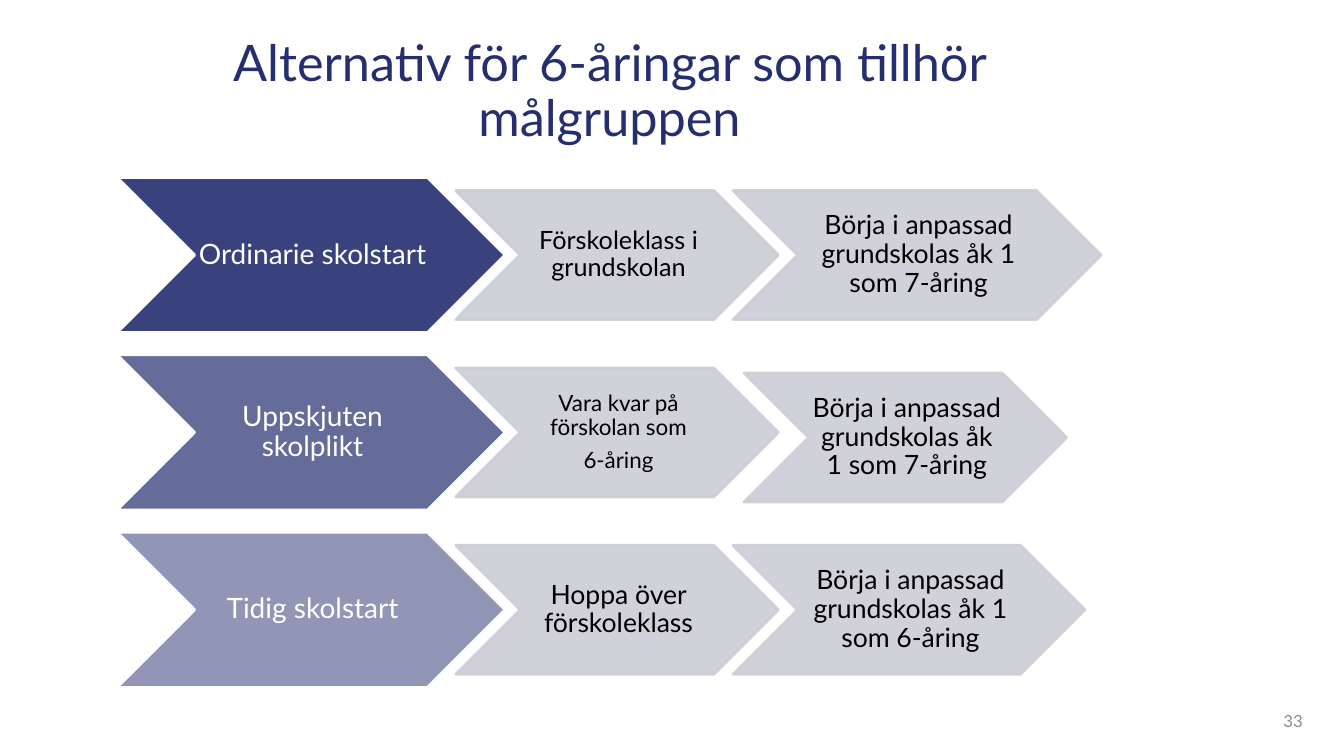
from dataclasses import dataclass

import lxml.etree
import pptx
import pptx.dml.color
import pptx.enum.shapes
import pptx.enum.text
import pptx.oxml.ns
import pptx.util

Inches = pptx.util.Inches
Pt = pptx.util.Pt
ALIGN = pptx.enum.text.PP_ALIGN
ANCHOR = pptx.enum.text.MSO_ANCHOR

COLORS = {
    "navy": "252E6F",
    "grey": "CDCDD5",
    "white": "FFFFFF",
    "black": "000000",
    "number": "8C8C8C",
}
FONT = "Lato"
FIRST_CENTER, ROW_PITCH = 2.53, 1.76
START_LEFT, START_WIDTH, START_HEIGHT = 1.16, 3.85, 1.54
STEP_HEIGHT, STEP_WIDTH = 1.28, 3.2
STEP_OPACITY = 90


@dataclass
class Step:
    text: str
    size: int
    left: float
    width: float = STEP_WIDTH
    drop: float = 0


@dataclass
class Alternative:
    name: str
    opacity: int
    steps: list[Step]


ALTERNATIVES = [
    Alternative("Ordinarie skolstart", 90, [
        Step("Förskoleklass i grundskolan", 18, 4.52),
        Step("Börja i anpassad grundskolas åk 1 som 7-åring", 19, 7.27, 3.65),
    ]),
    Alternative("Uppskjuten skolplikt", 70, [
        Step("Vara kvar på förskolan som\n6-åring", 16, 4.52),
        Step("Börja i anpassad grundskolas åk 1 som 7-åring", 19, 7.38, drop=0.05),
    ]),
    Alternative("Tidig skolstart", 50, [
        Step("Hoppa över förskoleklass", 19, 4.52),
        Step("Börja i anpassad grundskolas åk 1 som 6-åring", 19, 7.27, 3.49),
    ]),
]


def rgb(name: str) -> pptx.dml.color.RGBColor:
    return pptx.dml.color.RGBColor.from_string(COLORS[name])


def write(frame, text: str, size: int, color: str, align, anchor,
          line_spacing: float = 0.9, space_after: float = 0) -> None:
    frame.word_wrap = True
    frame.vertical_anchor = anchor
    frame.text = text
    for paragraph in frame.paragraphs:
        paragraph.alignment = align
        paragraph.line_spacing = line_spacing
        paragraph.space_after = Pt(space_after)
        for run in paragraph.runs:
            run.font.name = FONT
            run.font.size = Pt(size)
            run.font.color.rgb = rgb(color)


def set_opacity(fill_parent, percent: int) -> None:
    color = fill_parent.find(pptx.oxml.ns.qn("a:solidFill"))[0]
    alpha = lxml.etree.SubElement(color, pptx.oxml.ns.qn("a:alpha"))
    alpha.set("val", str(percent * 1000))


def add_chevron(slide, left: float, center: float, width: float, height: float,
                text: str, size: int, fill: str, opacity: int,
                line: str, line_opacity: int, text_color: str) -> None:
    chevron = slide.shapes.add_shape(
        pptx.enum.shapes.MSO_SHAPE.CHEVRON, Inches(left),
        Inches(center - height / 2), Inches(width), Inches(height))
    chevron.shadow.inherit = False
    chevron.fill.solid()
    chevron.fill.fore_color.rgb = rgb(fill)
    chevron.line.color.rgb = rgb(line)
    chevron.line.width = Pt(2)
    properties = chevron._element.spPr
    set_opacity(properties, opacity)
    set_opacity(properties.find(pptx.oxml.ns.qn("a:ln")), line_opacity)
    frame = chevron.text_frame
    frame.margin_left, frame.margin_right = Inches(0.03), Inches(0)
    frame.margin_top = frame.margin_bottom = Inches(0.01)
    write(frame, text, size, text_color, ALIGN.CENTER, ANCHOR.MIDDLE,
          space_after=round(size * 0.35))


def add_alternative(slide, alternative: Alternative, center: float) -> None:
    add_chevron(slide, START_LEFT, center, START_WIDTH, START_HEIGHT,
                alternative.name, 20, "navy", alternative.opacity,
                "white", 100, "white")
    for step in alternative.steps:
        add_chevron(slide, step.left, center + step.drop, step.width, STEP_HEIGHT,
                    step.text, step.size, "grey", STEP_OPACITY,
                    "grey", STEP_OPACITY, "black")


def main() -> None:
    deck = pptx.Presentation()
    deck.slide_width, deck.slide_height = Inches(13.33), Inches(7.5)
    slide = deck.slides.add_slide(deck.slide_layouts[6])

    heading = slide.shapes.add_textbox(
        Inches(0.92), Inches(0.36), Inches(10.25), Inches(1.15))
    write(heading.text_frame, "Alternativ för 6-åringar som tillhör målgruppen",
          36, "navy", ALIGN.CENTER, ANCHOR.BOTTOM)

    page_number = slide.shapes.add_textbox(
        Inches(10.02), Inches(6.95), Inches(3), Inches(0.4))
    write(page_number.text_frame, "33", 12, "number", ALIGN.RIGHT, ANCHOR.MIDDLE,
          line_spacing=1.0)

    for row, alternative in enumerate(ALTERNATIVES):
        add_alternative(slide, alternative, FIRST_CENTER + row * ROW_PITCH)

    deck.save("out.pptx")


if __name__ == "__main__":
    main()
